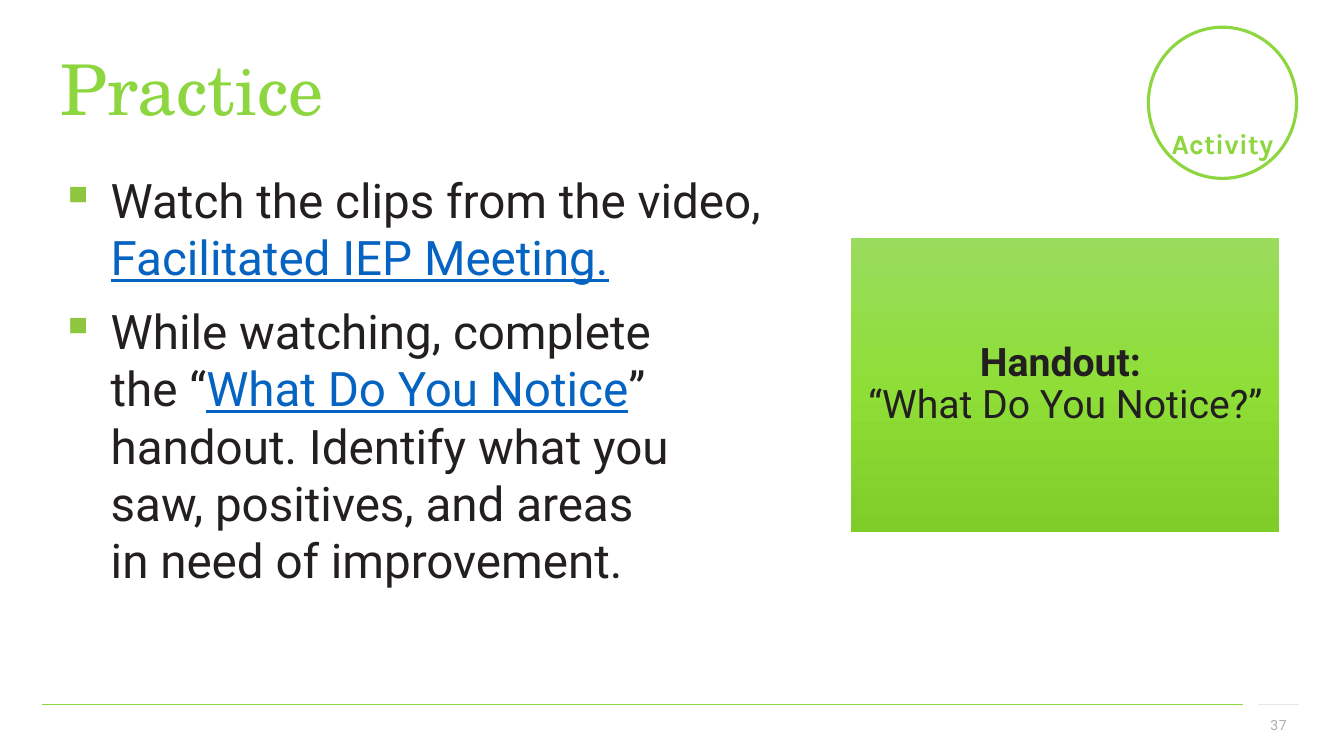
from copy import deepcopy

from pptx import Presentation
from pptx.dml.color import RGBColor
from pptx.enum.shapes import MSO_CONNECTOR as CONNECTOR, MSO_SHAPE as SHAPE
from pptx.enum.text import MSO_ANCHOR as ANCHOR, PP_ALIGN as ALIGN
from pptx.oxml.ns import qn
from pptx.oxml.xmlchemy import OxmlElement
from pptx.util import Inches, Pt

GREEN, BULLET_GREEN, INK, LINK = "8ED63F", "8EC63F", "231F20", "0563C1"
RULE_GRAY, NUMBER_GRAY = "E7E6E6", "AFABAB"
BODY_FONT = "Roboto"

TITLE = "Practice"
PLAIN = {"color": INK}
LINKED = {"color": LINK, "underline": True}
BULLETS = [
    [("Watch the clips from the video, ", PLAIN), ("Facilitated IEP Meeting.", LINKED)],
    [
        ("While watching, complete \nthe “", PLAIN),
        ("What Do You Notice", LINKED),
        ("” handout. Identify what you \nsaw, positives, and areas \nin need of improvement.", PLAIN),
    ],
]
HANDOUT = [("Handout: \n", {"color": INK, "bold": True}), ("“What Do You Notice?”", PLAIN)]
HANDOUT_STOPS = [(0, "9ADC5E"), (0.5, "8EDE37"), (1, "7FCD29")]
FOOTER_RULES = [(0.42, 12.33, GREEN), (12.48, 12.88, RULE_GRAY)]
FOOTER_Y = 6.99
PAGE_NUMBER = "37"
BADGE = "Activity"
BADGE_LEFT, BADGE_WIDTH = 11.39, 1.47


def rgb(value):
    return RGBColor.from_string(value)


def add_runs(para, text, size, font, color, bold=False, underline=False):
    """Add text to a paragraph, turning each newline into a line break."""
    for index, part in enumerate(text.split("\n")):
        if index:
            para.add_line_break()
        if part:
            span = para.add_run()
            span.text = part
            span.font.size = Pt(size)
            span.font.name = font
            span.font.bold = bold
            span.font.underline = underline
            span.font.color.rgb = rgb(color)


def add_box(left, top, width, height, anchor=ANCHOR.TOP):
    frame = page.shapes.add_textbox(*map(Inches, (left, top, width, height))).text_frame
    frame.word_wrap = True
    frame.vertical_anchor = anchor
    return frame


def add_shape(kind, left, top, width, height):
    shape = page.shapes.add_shape(kind, *map(Inches, (left, top, width, height)))
    shape.shadow.inherit = False
    return shape


def set_bullet(para, indent):
    props = para._p.get_or_add_pPr()
    props.set("marL", str(Inches(indent)))
    props.set("indent", str(-Inches(indent)))
    color = OxmlElement("a:buClr")
    value = OxmlElement("a:srgbClr")
    value.set("val", BULLET_GREEN)
    color.append(value)
    mark = OxmlElement("a:buChar")
    mark.set("char", "▪")
    props.extend([color, mark])


deck = Presentation()
deck.slide_width, deck.slide_height = Inches(13.33), Inches(7.5)
page = deck.slides.add_slide(deck.slide_layouts[6])

for start, end, color in FOOTER_RULES:
    rule = page.shapes.add_connector(
        CONNECTOR.STRAIGHT, *map(Inches, (start, FOOTER_Y, end, FOOTER_Y)))
    rule.line.color.rgb = rgb(color)
    rule.line.width = Pt(1)
    rule._element.spPr.append(OxmlElement("a:effectLst"))

title = add_box(0.5, 0.5, 12.5, 1.35).paragraphs[0]
title.line_spacing = 0.9
add_runs(title, TITLE, 50, "TeX Gyre Schola", GREEN)

body = add_box(0.5, 1.65, 7.63, 4.8)
for index, parts in enumerate(BULLETS):
    para = body.add_paragraph() if index else body.paragraphs[0]
    para.space_after = Pt(12)
    set_bullet(para, 0.5)
    for text, style in parts:
        add_runs(para, text, 34, BODY_FONT, **style)

number = add_box(12.44, FOOTER_Y, 0.42, 0.4, ANCHOR.MIDDLE).paragraphs[0]
number.alignment = ALIGN.RIGHT
add_runs(number, PAGE_NUMBER, 10, BODY_FONT, NUMBER_GRAY)
number.runs[0].font._element.set("spc", "50")

badge = add_box(BADGE_LEFT, 1.21, BADGE_WIDTH, 0.44).paragraphs[0]
badge.alignment = ALIGN.CENTER
add_runs(badge, BADGE, 20, "Karla", GREEN, bold=True)

ring = add_shape(SHAPE.OVAL, BADGE_LEFT, 0.27, BADGE_WIDTH, 1.5)
ring.fill.background()
ring.line.color.rgb = rgb(GREEN)
ring.line.width = Pt(2.25)

card = add_shape(SHAPE.RECTANGLE, 8.44, 2.36, 4.25, 2.92)
card.line.fill.background()
card.fill.gradient()
card.fill.gradient_angle = 270
stops = card._element.spPr.find(qn("a:gradFill")).find(qn("a:gsLst"))
stops.append(deepcopy(stops[0]))
for stop, (position, color) in zip(card.fill.gradient_stops, HANDOUT_STOPS):
    stop.position = position
    stop.color.rgb = rgb(color)

frame = card.text_frame
frame.word_wrap = True
frame.vertical_anchor = ANCHOR.MIDDLE
frame.margin_left = frame.margin_right = frame.margin_top = frame.margin_bottom = Inches(0.12)
handout = frame.paragraphs[0]
handout.alignment = ALIGN.CENTER
handout.line_spacing = 0.9
for text, style in HANDOUT:
    add_runs(handout, text, 28, BODY_FONT, **style)

deck.save("out.pptx")
